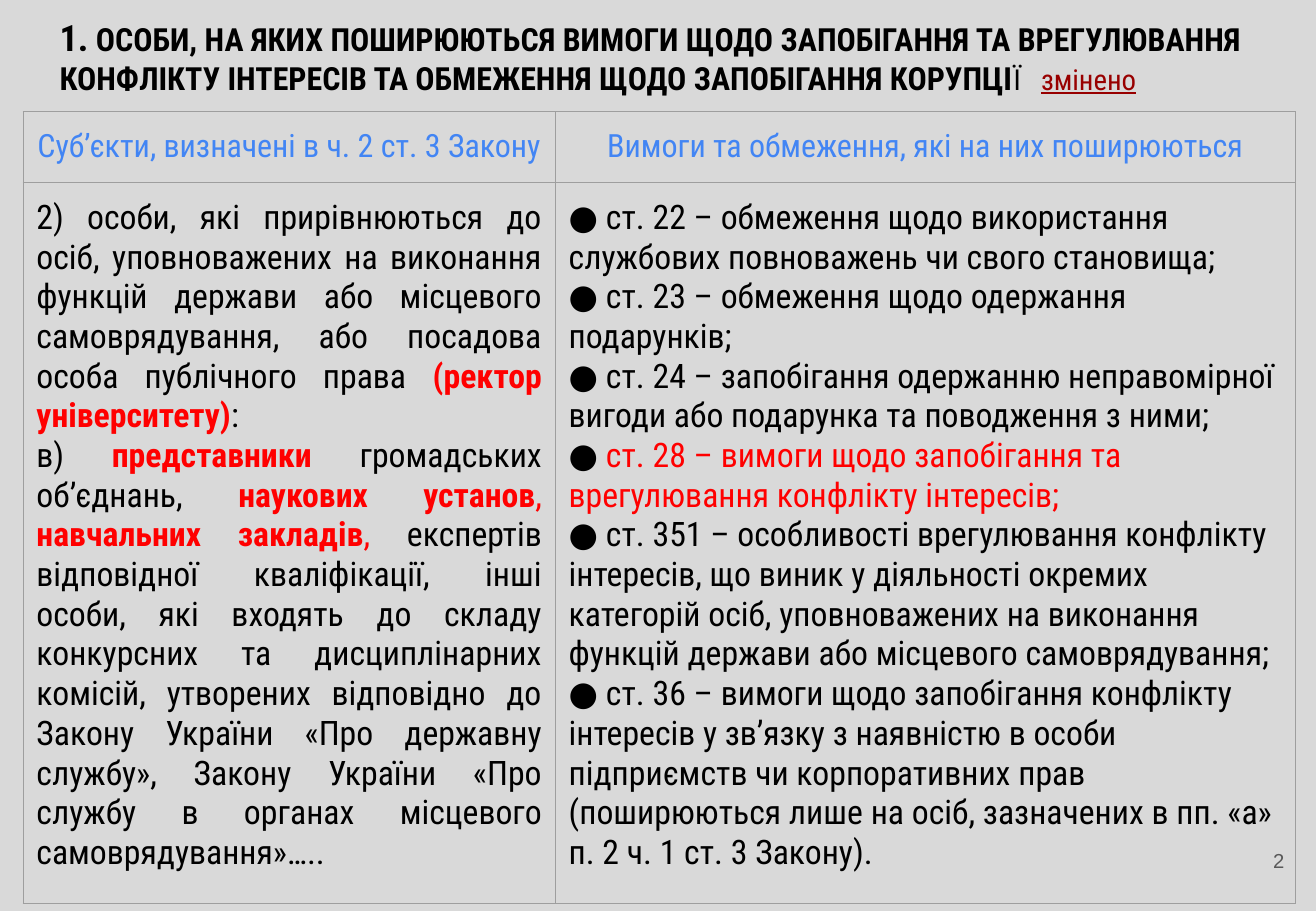
import dataclasses
import pptx
import pptx.dml.color
import pptx.enum.text
import pptx.oxml
import pptx.oxml.ns
import pptx.util

Inches = pptx.util.Inches
Align = pptx.enum.text.PP_ALIGN
Anchor = pptx.enum.text.MSO_ANCHOR


@dataclasses.dataclass(frozen=True)
class Theme:
    """Colours, fonts and type sizes of the slide."""
    font: str = "Roboto Condensed"
    plain: str = "Arial"
    back: str = "D9D9D9"
    ink: str = "000000"
    red: str = "FF0000"
    wine: str = "980000"
    blue: str = "4285F4"
    grey: str = "595959"
    rule: str = "9E9E9E"
    lead: float = 21.6
    title: float = 18.9
    note: float = 17.1
    head: float = 19
    body: float = 20
    page: float = 12


THEME = Theme()
HEADS = ["Суб’єкти, визначені в ч. 2 ст. 3 Закону",
         "Вимоги та обмеження, які на них поширюються"]
INK, RED, BOLD = (THEME.ink, False), (THEME.red, False), (THEME.red, True)
GROUPS = [
    [("2) особи, які прирівнюються до осіб, уповноважених на виконання функцій "
      "держави або місцевого самоврядування, або посадова особа публічного права ", INK),
     ("(ректор університету)", BOLD), (":", INK)],
    [("в) ", INK), ("представники ", BOLD), ("громадських об’єднань, ", INK),
     ("наукових установ", BOLD), (", ", RED), ("навчальних закладів", BOLD), (", ", RED),
     ("експертів відповідної кваліфікації, інші особи, які входять до складу "
      "конкурсних та дисциплінарних комісій, утворених відповідно до Закону України "
      "«Про державну службу», Закону України «Про службу в органах місцевого "
      "самоврядування»…..", INK)],
]
RULES = [
    [("● ст. 22 – обмеження щодо використання", INK)],
    [("службових повноважень чи свого становища;", INK)],
    [("● ст. 23 – обмеження щодо одержання подарунків;", INK)],
    [("● ст. 24 – запобігання одержанню неправомірної вигоди або подарунка "
      "та поводження з ними;", INK)],
    [("● ", INK),
     ("ст. 28 – вимоги щодо запобігання та врегулювання конфлікту інтересів;", RED)],
    [("● ст. 351 – особливості врегулювання конфлікту інтересів, що виник у діяльності "
      "окремих категорій осіб, уповноважених на виконання функцій держави або "
      "місцевого самоврядування;", INK)],
    [("● ст. 36 – вимоги щодо запобігання конфлікту інтересів у зв’язку з наявністю "
      "в особи підприємств чи корпоративних прав (поширюються лише на осіб, "
      "зазначених в пп. «а» п. 2 ч. 1 ст. 3 Закону).", INK)],
]


def paint(run, size, color, bold=False, font=THEME.font):
    """Format one run."""
    run.font.name = font
    run.font.size = pptx.util.Pt(size)
    run.font.bold = bold
    run.font.color.rgb = pptx.dml.color.RGBColor.from_string(color)


def add_run(par, text, size, color, bold=False):
    """Append a formatted run to a paragraph."""
    run = par.add_run()
    run.text = text
    paint(run, size, color, bold)
    return run


def add_box(slide, box):
    """Place a wrapping text box and return its frame."""
    frame = slide.shapes.add_textbox(*map(Inches, box)).text_frame
    frame.word_wrap = True
    frame.margin_left = frame.margin_right = Inches(0.12)
    frame.margin_top = frame.margin_bottom = Inches(0.12)
    return frame


def add_title(slide, box):
    """Write the heading with its change mark."""
    par = add_box(slide, box).paragraphs[0]
    add_run(par, "1.", THEME.lead, THEME.ink, True)
    add_run(par, " ОСОБИ, НА ЯКИХ ПОШИРЮЮТЬСЯ ВИМОГИ ЩОДО ЗАПОБІГАННЯ ТА ВРЕГУЛЮВАННЯ "
            "КОНФЛІКТУ ІНТЕРЕСІВ ТА ОБМЕЖЕННЯ ЩОДО ЗАПОБІГАННЯ КОРУПЦІ",
            THEME.title, THEME.ink, True)
    add_run(par, "Ї", THEME.note, THEME.ink)
    gap = add_run(par, " ", THEME.note, THEME.ink)
    gap._r.get_or_add_rPr().set("spc", "800")
    add_run(par, "змінено", THEME.note, THEME.wine).font.underline = True


def frame_cell(cell):
    """Clear the fill, set the margins and rule all four sides."""
    cell.margin_left = cell.margin_right = Inches(0.11)
    cell.margin_top = cell.margin_bottom = Inches(0.13)
    props = cell._tc.get_or_add_tcPr()
    for side in ("lnL", "lnR", "lnT", "lnB"):
        props.append(pptx.oxml.parse_xml(
            f'<a:{side} {pptx.oxml.ns.nsdecls("a")} w="9525"><a:solidFill>'
            f'<a:srgbClr val="{THEME.rule}"/></a:solidFill></a:{side}>'))
    cell.fill.background()


def fill_cell(cell, pars, align):
    """Write the paragraphs of one body cell."""
    frame = cell.text_frame
    for num, parts in enumerate(pars):
        par = frame.add_paragraph() if num else frame.paragraphs[0]
        par.alignment = align
        for text, (color, bold) in parts:
            add_run(par, text, THEME.body, color, bold)


def add_grid(slide, box):
    """Build the table of subjects and their limits."""
    left, top, width, height = box
    table = slide.shapes.add_table(2, 2, *map(Inches, box)).table
    table.first_row = table.horz_banding = False
    first, head = 4.38, 0.58
    for col, size in zip(table.columns, (first, width - first)):
        col.width = Inches(size)
    for row, size in zip(table.rows, (head, height - head)):
        row.height = Inches(size)
    for cell in table.iter_cells():
        frame_cell(cell)
    for num, text in enumerate(HEADS):
        frame = table.cell(0, num).text_frame
        frame.text = text
        par = frame.paragraphs[0]
        par.alignment = Align.CENTER
        paint(par.runs[0], THEME.head, THEME.blue)
    fill_cell(table.cell(1, 0), GROUPS, Align.JUSTIFY)
    fill_cell(table.cell(1, 1), RULES, Align.LEFT)


def add_page(slide, box):
    """Write the page number."""
    frame = add_box(slide, box)
    frame.vertical_anchor = Anchor.MIDDLE
    frame.text = "2"
    par = frame.paragraphs[0]
    par.alignment = Align.RIGHT
    paint(par.runs[0], THEME.page, THEME.grey, font=THEME.plain)


def main():
    """Build and save the slide."""
    deck = pptx.Presentation()
    deck.slide_width, deck.slide_height = Inches(10.83), Inches(7.5)
    slide = deck.slides.add_slide(deck.slide_layouts[6])
    fill = slide.background.fill
    fill.solid()
    fill.fore_color.rgb = pptx.dml.color.RGBColor.from_string(THEME.back)
    add_title(slide, (0.37, 0, 10.14, 1.02))
    add_grid(slide, (0.19, 0.92, 10.47, 6.52))
    add_page(slide, (10.04, 6.8, 0.65, 0.57))
    deck.save("out.pptx")


if __name__ == "__main__":
    main()
